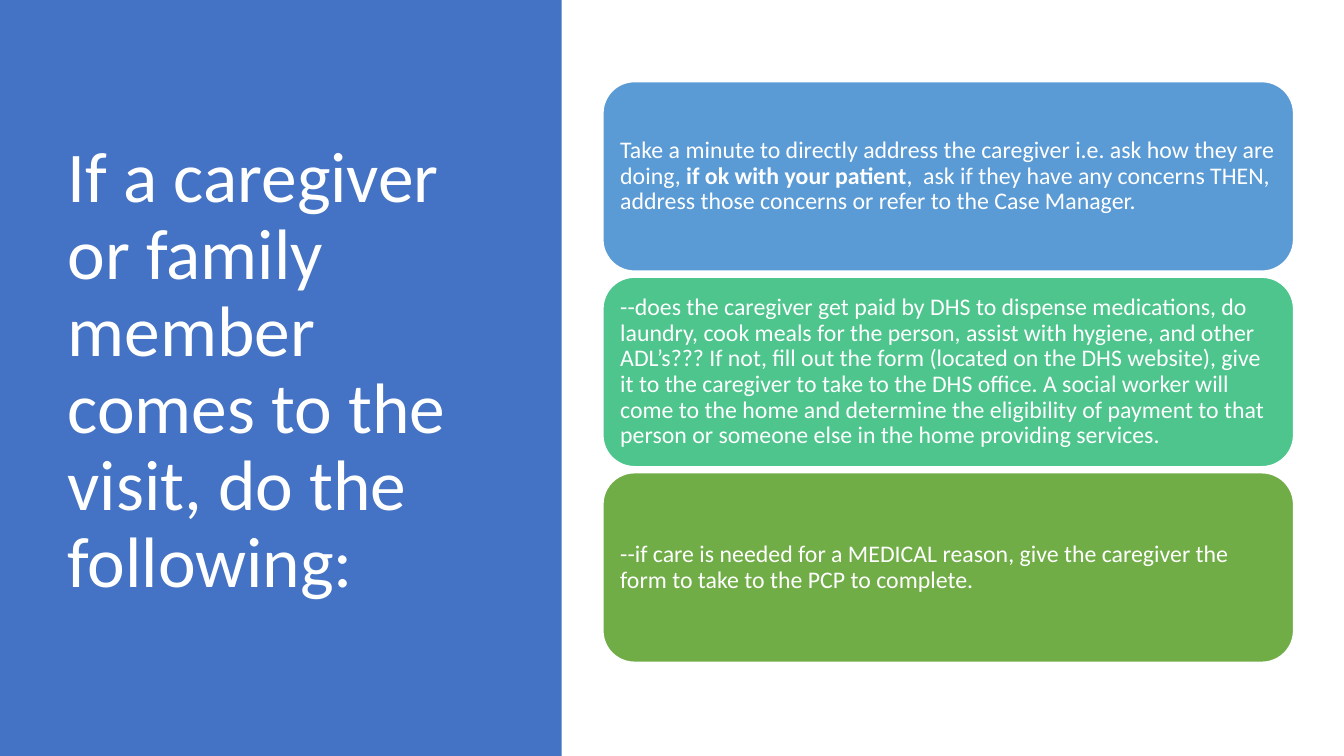
from dataclasses import dataclass

from pptx import Presentation
from pptx.dml.color import RGBColor
from pptx.enum.shapes import MSO_SHAPE
from pptx.enum.text import MSO_ANCHOR, MSO_AUTO_SIZE, PP_ALIGN
from pptx.shapes.autoshape import Shape
from pptx.slide import Slide
from pptx.text.text import TextFrame
from pptx.util import Inches, Pt

RECTANGLE = MSO_SHAPE.RECTANGLE
ROUNDED_RECTANGLE = MSO_SHAPE.ROUNDED_RECTANGLE
MIDDLE = MSO_ANCHOR.MIDDLE
LEFT = PP_ALIGN.LEFT
NO_AUTOFIT = MSO_AUTO_SIZE.NONE
TITLE_ONLY = 5


@dataclass(frozen=True)
class Theme:
    font: str = "Calibri"
    white: RGBColor = RGBColor(0xFF, 0xFF, 0xFF)
    panel: RGBColor = RGBColor(0x44, 0x72, 0xC4)
    blue: RGBColor = RGBColor(0x5B, 0x9B, 0xD5)
    teal: RGBColor = RGBColor(0x4D, 0xC5, 0x8D)
    green: RGBColor = RGBColor(0x70, 0xAD, 0x47)
    title_size: int = 51
    body_size: int = 17
    line_spacing: float = 0.9


@dataclass(frozen=True)
class Phrase:
    text: str
    bold: bool = False


@dataclass(frozen=True)
class Card:
    color: RGBColor
    phrases: tuple[Phrase, ...]


THEME = Theme()
TITLE = "If a caregiver or family member comes to the visit, do the following:"
CARDS = (
    Card(THEME.blue, (
        Phrase("Take a minute to directly address the caregiver i.e. ask how "
               "they are doing, "),
        Phrase("if ok with your patient", bold=True),
        Phrase(",  ask if they have any concerns THEN, address those concerns "
               "or refer to the Case Manager."),
    )),
    Card(THEME.teal, (
        Phrase("--does the caregiver get paid by DHS to dispense medications, "
               "do laundry, cook meals for the person, assist with hygiene, and "
               "other ADL’s??? If not, fill out the form (located on the DHS "
               "website), give it to the caregiver to take to the DHS office. A "
               "social worker will come to the home and determine the "
               "eligibility of payment to that person or someone else in the "
               "home providing services."),
    )),
    Card(THEME.green, (
        Phrase("--if care is needed for a MEDICAL reason, give the caregiver "
               "the form to take to the PCP to complete."),
    )),
)
CARD_LEFT, CARD_TOP = 5.98, 0.81
CARD_WIDTH, CARD_HEIGHT, CARD_GAP = 6.85, 1.88, 0.06
CARD_INSET = 0.16


def write_text(frame: TextFrame, phrases: tuple[Phrase, ...], size: int) -> None:
    frame.word_wrap = True
    frame.auto_size = NO_AUTOFIT
    frame.vertical_anchor = MIDDLE
    paragraph = frame.paragraphs[0]
    paragraph.alignment = LEFT
    paragraph.line_spacing = THEME.line_spacing
    paragraph.font.name = THEME.font
    paragraph.font.size = Pt(size)
    paragraph.font.color.rgb = THEME.white
    for phrase in phrases:
        run = paragraph.add_run()
        run.text = phrase.text
        if phrase.bold:
            run.font.bold = True


def add_panel(slide: Slide, height: int) -> Shape:
    panel = slide.shapes.add_shape(RECTANGLE, 0, 0, Inches(5.57), height)
    panel.shadow.inherit = False
    panel.fill.solid()
    panel.fill.fore_color.rgb = THEME.panel
    panel.line.fill.background()
    return panel


def format_title(title: Shape, panel: Shape) -> None:
    title.left, title.top = Inches(0.57), Inches(0.68)
    title.width, title.height = Inches(4.16), Inches(6.02)
    write_text(title.text_frame, (Phrase(TITLE),), THEME.title_size)
    title.element.addprevious(panel.element)


def add_card(slide: Slide, card: Card, top: float) -> None:
    shape = slide.shapes.add_shape(
        ROUNDED_RECTANGLE, Inches(CARD_LEFT), Inches(top),
        Inches(CARD_WIDTH), Inches(CARD_HEIGHT))
    shape.shadow.inherit = False
    shape.fill.solid()
    shape.fill.fore_color.rgb = card.color
    shape.line.color.rgb = THEME.white
    shape.line.width = Pt(1)
    frame = shape.text_frame
    frame.margin_left = frame.margin_right = Inches(CARD_INSET / 2)
    frame.margin_top = frame.margin_bottom = Inches(CARD_INSET / 2)
    write_text(frame, card.phrases, THEME.body_size)


def main() -> None:
    presentation = Presentation()
    presentation.slide_width = Inches(13.33)
    presentation.slide_height = Inches(7.5)
    slide = presentation.slides.add_slide(presentation.slide_layouts[TITLE_ONLY])
    panel = add_panel(slide, presentation.slide_height)
    format_title(slide.shapes.title, panel)
    for index, card in enumerate(CARDS):
        add_card(slide, card, CARD_TOP + index * (CARD_HEIGHT + CARD_GAP))
    presentation.save("out.pptx")


if __name__ == "__main__":
    main()
